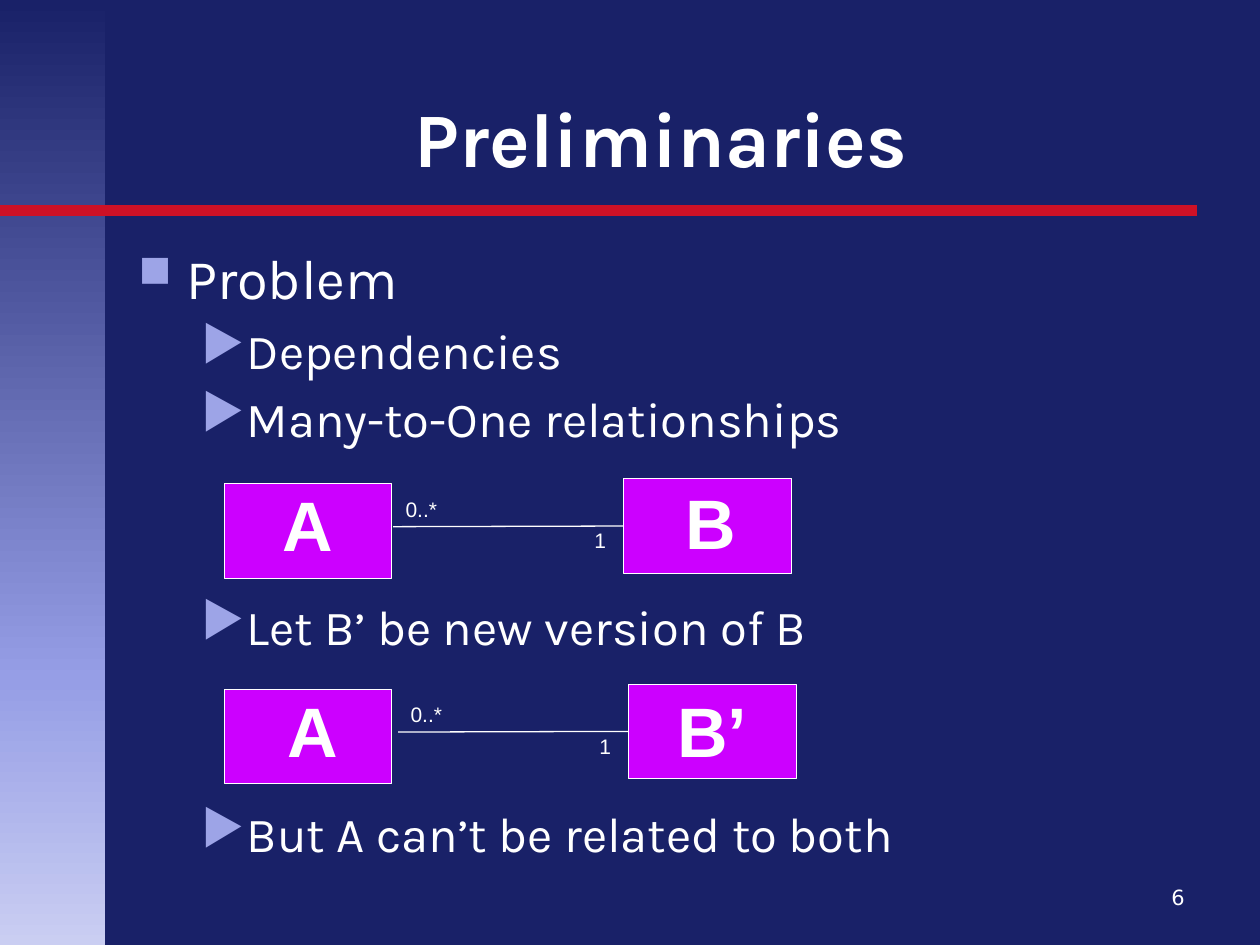
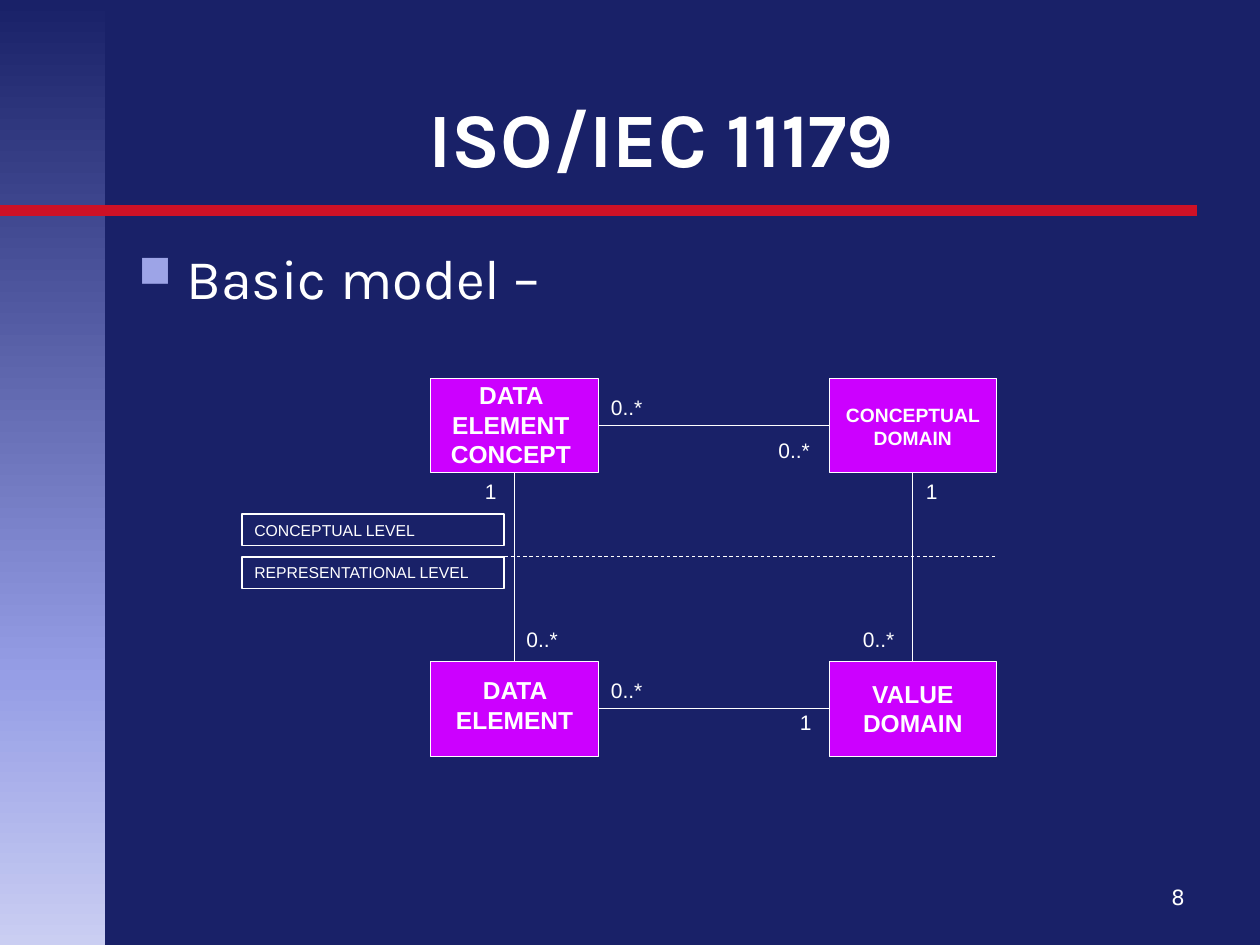
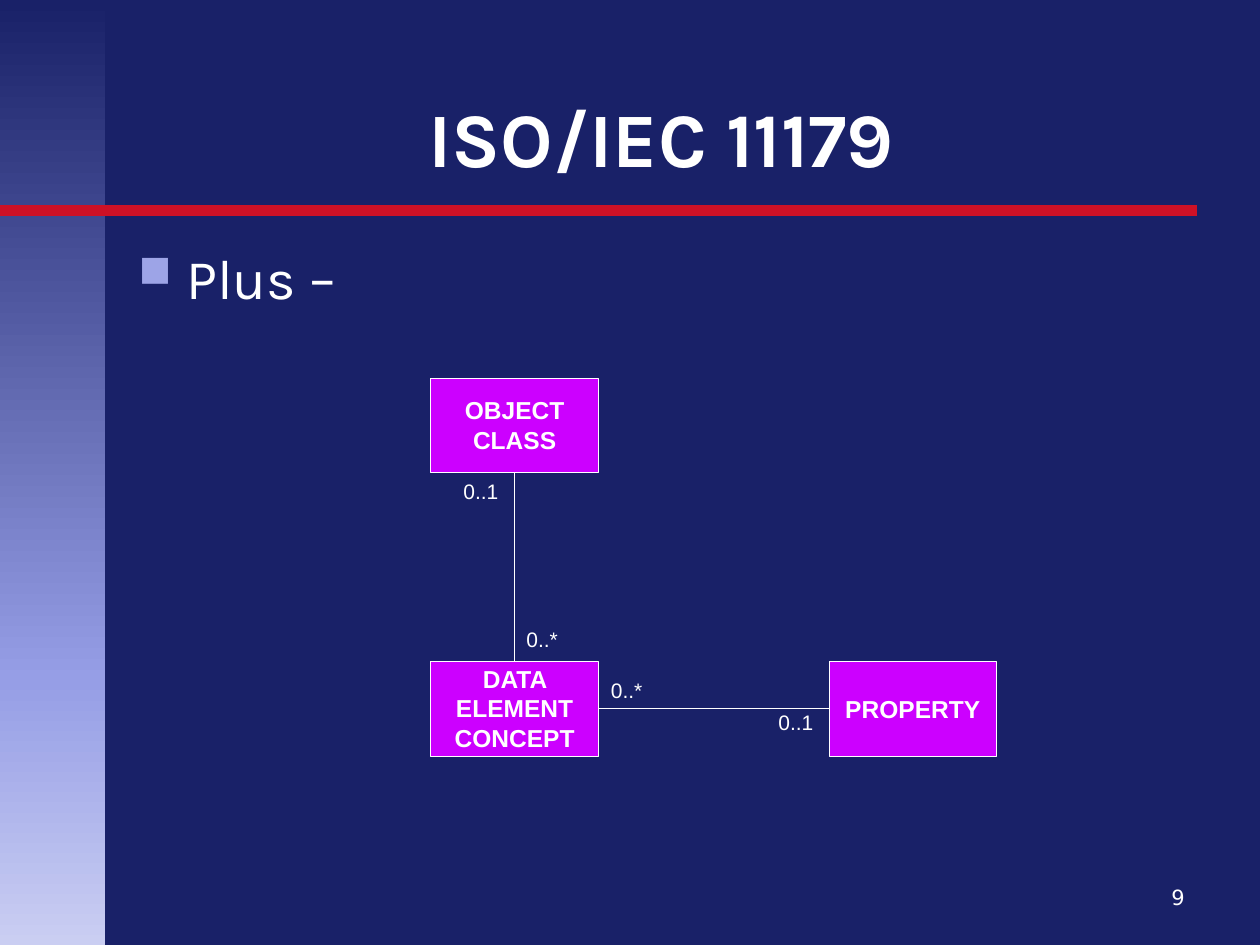
from copy import deepcopy
from lxml import etree
from pptx import Presentation, util as u
from pptx.dml.color import RGBColor
from pptx.enum import dml, shapes, text
from pptx.oxml import ns

NAVY, RED, WHITE, PURPLE, LILAC = "192168", "CE1126", "FFFFFF", "CC00FF", "9DA4E7"
SIDEBAR_STOPS = [(0, NAVY), (0.72, "969EE6"), (1, "CACEF2")]
WIDTH, HEIGHT = 10, 7.5
BOX_W, BOX_H = 1.33, 0.75
LEFT, RIGHT, UPPER, LOWER = 3.42, 6.58, 3, 5.25   # columns and rows of the model
TOP, WEST, BOTTOM, EAST = range(4)                # connection sites
COUNT_W = {"1": 0.33, "0..1": 0.5, "0..*": 0.58}

TITLE = dict(name="Karla", size=44, bold=True)
NUMBER = dict(name="DejaVu Sans", size=12)
COUNT = dict(name="Arial", size=12)
LEVEL = dict(name="Arial", size=9)
# bullet, its size in percent, left margin, hanging indent, text size, space before
BULLETS = [("■", 80, 0.38, 0.38, 32, 0), ("▶", 100, 0.81, 0.31, 28, 5.6)]
DIAGRAM_GAP = 85

# Each relation: shift right, shift down
RELATIONS = [(0, 0), (0.04, 1.63)]

# boxes: left, top / names: text, left, top, height, size, anchored in the middle
# links: ends as (box, site) or as a point (x, y) in inches
# counts: text, left, top / levels: text, top
SLIDES = [
    dict(
        number="6", title="Preliminaries",
        body=[("Problem", 0, None), ("Dependencies", 1, None),
              ("Many-to-One relationships", 1, None),
              ("Let B’ be new version of B", 1, DIAGRAM_GAP),
              ("But A can’t be related to both", 1, DIAGRAM_GAP)],
        boxes=[box for dx, dy in RELATIONS
               for box in ((1.78, 3.84 + dy), (4.95 + dx, 3.8 + dy))],
        names=[("A", 1.78, 3.77, 0.77, 40, False), ("B", 4.98, 3.92, 0.44, 40, True),
               ("A", 1.82, 5.41, 0.77, 40, False), ("B’", 4.99, 5.57, 0.44, 40, True)],
        links=[((3.12 + dx, 4.18 + dy), (2 * row + 1, WEST))
               for row, (dx, dy) in enumerate(RELATIONS)],
        counts=[count for dx, dy in RELATIONS
                for count in (("1", 4.62 + dx, 4.14 + dy), ("0..*", 3.12 + dx, 3.89 + dy))],
    ),
    dict(
        number="8", title="ISO/IEC 11179", body=[("Basic model –", 0, None)],
        boxes=[(LEFT, UPPER), (RIGHT, UPPER), (LEFT, LOWER), (RIGHT, LOWER)],
        names=[("DATA ELEMENT CONCEPT", 3.39, 2.97, 0.81, 14, False),
               ("CONCEPTUAL DOMAIN", RIGHT, 3.15, 0.47, 11, False),
               ("DATA ELEMENT", LEFT, 5.31, 0.57, 14, False),
               ("VALUE DOMAIN", RIGHT, 5.34, 0.57, 14, False)],
        links=[((0, BOTTOM), (2, TOP)), ((2, EAST), (3, WEST)),
               ((3, TOP), (1, BOTTOM)), ((1, WEST), (0, EAST))],
        counts=[("0..*", 4.75, 3.08), ("0..*", 6.08, 3.42), ("1", 3.75, 3.75),
                ("1", 7.25, 3.75), ("0..*", 4.08, 4.92), ("0..*", 6.75, 4.92),
                ("0..*", 4.75, 5.33), ("1", 6.25, 5.58)],
        levels=[("CONCEPTUAL LEVEL", 4.08), ("REPRESENTATIONAL LEVEL", 4.42)],
    ),
    dict(
        number="9", title="ISO/IEC 11179", body=[("Plus –", 0, None)],
        boxes=[(LEFT, UPPER), (LEFT, LOWER), (RIGHT, LOWER)],
        names=[("OBJECT CLASS", LEFT, 3.08, 0.58, 14, True),
               ("DATA ELEMENT CONCEPT", LEFT, 5.22, 0.81, 14, False),
               ("PROPERTY", RIGHT, 5.46, 0.34, 14, False)],
        links=[((0, BOTTOM), (1, TOP)), ((1, EAST), (2, WEST))],
        counts=[("0..1", 3.58, 3.75), ("0..*", 4.08, 4.92),
                ("0..*", 4.75, 5.33), ("0..1", 6.08, 5.58)],
    ),
]


def color(value):
    return RGBColor.from_string(value)


def inches(*lengths):
    return [u.Inches(length) for length in lengths]


def style(font, formats):
    font.color.rgb = color(WHITE)
    for key, value in formats.items():
        setattr(font, key, u.Pt(value) if key == "size" else value)


def write(box, words, formats, align="LEFT", anchor="TOP"):
    frame = box.text_frame
    frame.word_wrap = True
    frame.vertical_anchor = getattr(text.MSO_ANCHOR, anchor)
    para = frame.paragraphs[0]
    para.alignment = getattr(text.PP_ALIGN, align)
    span = para.add_run()
    span.text = words
    style(span.font, formats)


def add_text(page, at, *content):
    write(page.shapes.add_textbox(*inches(*at)), *content)


def add_rect(page, at, fill=None, line=None):
    box = page.shapes.add_shape(shapes.MSO_SHAPE.RECTANGLE, *inches(*at))
    box.shadow.inherit = False
    if fill:
        box.fill.solid()
        box.fill.fore_color.rgb = color(fill)
    else:
        box.fill.background()
    if line:
        box.line.color.rgb = color(WHITE)
        box.line.width = u.Pt(line)
    else:
        box.line.fill.background()
    return box


def add_line(page, start, end, stroke=WHITE, width=0.75):
    line = page.shapes.add_connector(shapes.MSO_CONNECTOR.STRAIGHT, *inches(*start, *end))
    line.line.color.rgb = color(stroke)
    line.line.width = u.Pt(width)
    etree.SubElement(line._element.spPr, ns.qn("a:effectLst"))
    return line


def add_sidebar(page):
    fill = add_rect(page, (0, 0, WIDTH / 12, HEIGHT), NAVY).fill
    fill.gradient()
    fill.gradient_angle = 270
    first = fill.gradient_stops[0]._gs
    first.addnext(deepcopy(first))
    for stop, (position, value) in zip(fill.gradient_stops, SIDEBAR_STOPS):
        stop.position = position
        stop.color.rgb = color(value)


def add_bullet(para, mark, percent, margin, hanging):
    props = para._p.get_or_add_pPr()
    props.set("marL", str(u.Inches(margin)))
    props.set("indent", str(-u.Inches(hanging)))
    tint = etree.SubElement(props, ns.qn("a:buClr"))
    etree.SubElement(tint, ns.qn("a:srgbClr"), val=LILAC)
    etree.SubElement(props, ns.qn("a:buSzPct"), val=str(percent * 1000))
    etree.SubElement(props, ns.qn("a:buChar"), char=mark)


def add_body(page, items):
    frame = page.shapes.add_textbox(*inches(1, 1.88, 8.5, 4.95)).text_frame
    frame.word_wrap = True
    for index, (words, level, gap) in enumerate(items):
        para = frame.add_paragraph() if index else frame.paragraphs[0]
        *bullet, size, before = BULLETS[level]
        para.level = level
        add_bullet(para, *bullet)
        para.space_before = u.Pt(gap or before)
        span = para.add_run()
        span.text = words
        style(span.font, dict(name="Karla", size=size))


def add_link(page, boxes, start, end):
    """Join two ends; an end that starts with a whole number is a box and its site."""
    line = add_line(page, *(end_point if isinstance(end_point[0], float) else (0, 0)
                            for end_point in (start, end)))
    for join, (place, site) in ((line.begin_connect, start), (line.end_connect, end)):
        if isinstance(place, int):
            join(boxes[place], site)


def add_levels(page, levels):
    for words, top in levels:
        write(add_rect(page, (1.92, top, 2.08, 0.25), line=0.75), words, LEVEL)
    border = add_line(page, (1.92, 4.42), (7.92, 4.42), width=0.5)
    border.line.dash_style = dml.MSO_LINE.DASH


def add_page(deck, content):
    page = deck.slides.add_slide(deck.slide_layouts[6])
    page.background.fill.solid()
    page.background.fill.fore_color.rgb = color(NAVY)
    add_sidebar(page)
    add_line(page, (0, 1.67), (9.5, 1.67), RED, 6)
    add_text(page, (1, 0.3, 8.5, 1.2), content["title"], TITLE, "CENTER", "BOTTOM")
    add_body(page, content["body"])
    add_text(page, (8.75, 6.92, 0.75, 0.4), content["number"], NUMBER, "RIGHT", "MIDDLE")

    boxes = [add_rect(page, (*corner, BOX_W, BOX_H), PURPLE, 0.5)
             for corner in content["boxes"]]
    for words, left, top, height, size, middle in content["names"]:
        add_text(page, (left, top, BOX_W, height), words,
                 dict(name="Arial", size=size, bold=True),
                 "CENTER", "MIDDLE" if middle else "TOP")
    for start, end in content["links"]:
        add_link(page, boxes, start, end)
    if "levels" in content:
        add_levels(page, content["levels"])
    for words, left, top in content["counts"]:
        add_text(page, (left, top, COUNT_W[words], 0.3), words, COUNT)


def main():
    deck = Presentation()
    deck.slide_width, deck.slide_height = inches(WIDTH, HEIGHT)
    for content in SLIDES:
        add_page(deck, content)
    deck.save("out.pptx")


if __name__ == "__main__":
    main()
